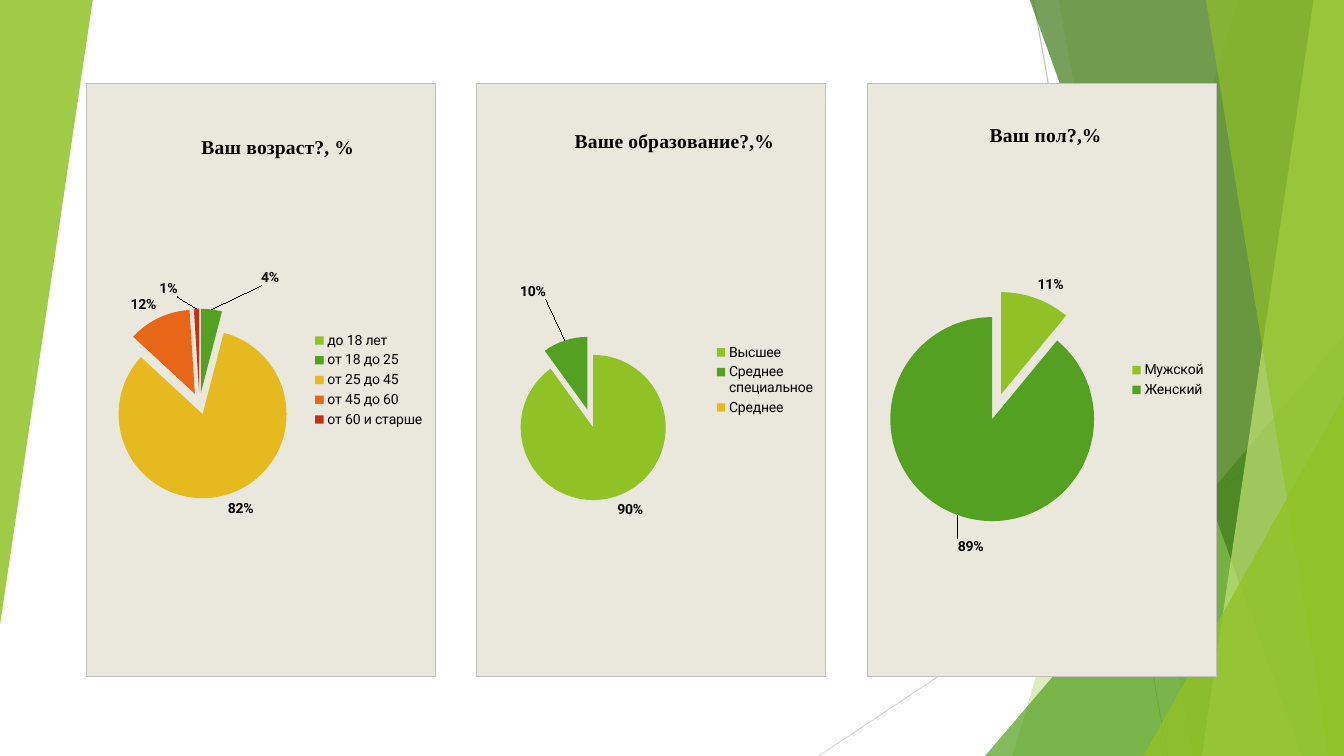
"""Build a slide with three survey pie charts over a green faceted backdrop."""
from copy import deepcopy

from pptx import Presentation
from pptx.chart import data as chart_data
from pptx.dml.color import RGBColor
from pptx.enum import chart as chart_enum, shapes
from pptx.oxml import parse_xml
from pptx.oxml.ns import nsdecls, qn
from pptx.util import Pt

PX = 9144
WIDTH, HEIGHT = 1333, 750
COLORS = {
    "lime": "90C226", "green": "54A021", "yellow": "E6B91E", "orange": "E76618",
    "red": "C42F1A", "forest": "3F7819", "pale": "C0E474", "panel": "EAE8DC",
    "border": "BFBFBF", "rule": "D9D9D9", "text": "000000",
}
SLICE_COLORS = ["lime", "green", "yellow", "orange", "red"]
RULES = [((1025, 0), (1158, 750), "border"), ((1333, 403), (812, 750), "rule")]
FACETS = [
    ("band", 1228, 1004, "lime", 30),
    ("band", 1050, 1183, "lime", 20),
    ("triangle", (977, 333, 356, 417), 0, "green", 72),
    ("band", 1021, 1291, "forest", 70),
    ("band", 1303, 1192, "pale", 70),
    ("band", 1196, 1318, "lime", 65),
    ("triangle", (1134, 393, 199, 357), 0, "lime", 80),
    ("triangle", (0, 0, 92, 620), 180, "lime", 85),
]
CHARTS = [
    {"title": "Ваш возраст?, %", "title_at": (0.32, 0.08),
     "slices": [("до 18 лет", 0), ("от 18 до 25", 4), ("от 25 до 45", 82),
                ("от 45 до 60", 12), ("от 60 и старше", 1)],
     "plot": (0.05, 0.38, 0.55, 0.32),
     "label_shifts": {1: (0.14, -0.03), 4: (-0.08, -0.01)}},
    {"title": "Ваше образование?,% ", "title_at": (0.27, 0.07),
     "slices": [("Высшее", 90), ("Среднее специальное", 10), ("Среднее ", 0)],
     "plot": (0.09, 0.18, 0.47, 0.77),
     "label_shifts": {1: (-0.05, -0.06)}},
    {"title": "Ваш пол?,% ", "title_at": (0.34, 0.06),
     "slices": [("Мужской", 11), ("Женский", 89)],
     "plot": (0.04, 0.35, 0.66, 0.39),
     "label_shifts": {1: (0.08, 0.03)}},
]
CHART_LEFT, CHART_TOP, CHART_WIDTH, CHART_HEIGHT = 85, 82, 347, 590
CHART_STEP = 387.5
EXPLOSION = 13


def color(name):
    return RGBColor.from_string(COLORS[name])


def chart_xml(tag, content="", attributes=""):
    return parse_xml(f'<c:{tag} {nsdecls("c", "a")} {attributes}>{content}</c:{tag}>')


def set_layout(parent, index, box, modes=""):
    for old in parent.findall(qn("c:layout")):
        parent.remove(old)
    values = "".join(f'<c:{key} val="{value}"/>' for key, value in zip("xywh", box))
    parent.insert(index, chart_xml("layout", f"<c:manualLayout>{modes}{values}</c:manualLayout>"))


def add_rule(slide, start, end, name):
    line = slide.shapes.add_connector(
        shapes.MSO_CONNECTOR.STRAIGHT, *(value * PX for value in start + end))
    line.line.color.rgb = color(name)
    line.line.width = Pt(0.75)
    line._element.spPr.append(parse_xml(f'<a:effectLst {nsdecls("a")}/>'))


def add_facet(slide, kind, place, detail, name, opacity):
    if kind == "band":
        builder = slide.shapes.build_freeform(place, -1, scale=PX)
        builder.add_line_segments([(WIDTH, -1), (WIDTH, HEIGHT), (detail, HEIGHT)], close=True)
        shape = builder.convert_to_shape()
    else:
        shape = slide.shapes.add_shape(
            shapes.MSO_SHAPE.ISOSCELES_TRIANGLE, *(value * PX for value in place))
        shape.adjustments[0] = 1
        shape.rotation = detail
    shape.shadow.inherit = False
    shape.line.fill.background()
    shape.fill.solid()
    shape.fill.fore_color.rgb = color(name)
    fill = shape._element.spPr.find(".//" + qn("a:srgbClr"))
    fill.append(parse_xml(f'<a:alpha {nsdecls("a")} val="{opacity * 1000}"/>'))


def style_labels(series, values, shifts):
    labels = series.data_labels
    labels.font.bold = True
    labels.font.size = Pt(10)
    labels.font.name = "Roboto"
    labels.font.color.rgb = color("text")
    sums_to_hundred = sum(values) == 100
    labels.number_format = "0%" if sums_to_hundred else '0"%"'
    labels.number_format_is_linked = False
    labels.show_percentage = sums_to_hundred
    labels.show_value = not sums_to_hundred
    labels.position = chart_enum.XL_LABEL_POSITION.OUTSIDE_END
    element = labels._element
    shared = [child for child in element if child.tag != qn("c:showLeaderLines")]
    special = []
    for index, value in enumerate(values):
        identity = f'<c:idx val="{index}"/>'
        if value == 0:
            special.append(chart_xml("dLbl", identity + '<c:delete val="1"/>'))
        elif index in shifts:
            label = chart_xml("dLbl", identity)
            label.extend(deepcopy(child) for child in shared)
            set_layout(label, 1, shifts[index])
            special.append(label)
    for position, label in enumerate(special):
        element.insert(position, label)


def add_pie(slide, left, content):
    names, values = zip(*content["slices"])
    data = chart_data.CategoryChartData()
    data.categories = names
    data.add_series("Series 1", values)
    box = (left, CHART_TOP, CHART_WIDTH, CHART_HEIGHT)
    chart = slide.shapes.add_chart(
        chart_enum.XL_CHART_TYPE.PIE, *(round(value * PX) for value in box), data).chart
    chart.font.size = Pt(10)
    chart.font.name = "Roboto"
    chart.font.color.rgb = color("text")
    chart.has_legend = True
    chart.legend.position = chart_enum.XL_LEGEND_POSITION.RIGHT
    chart.legend.include_in_layout = False

    chart.has_title = True
    title = chart.chart_title
    title.text_frame.text = content["title"]
    font = title.text_frame.paragraphs[0].runs[0].font
    font.size, font.bold, font.name = Pt(14), True, "Times New Roman"
    font.color.rgb = color("text")
    edges = '<c:xMode val="edge"/><c:yMode val="edge"/>'
    set_layout(title._element, 1, content["title_at"], edges)

    plot = chart.plots[0]
    plot.vary_by_categories = True
    series = plot.series[0]
    series._element.find(qn("c:tx")).addnext(chart_xml("explosion", attributes=f'val="{EXPLOSION}"'))
    for index, name in enumerate(SLICE_COLORS[:len(values)]):
        point = series.points[index].format
        point.fill.solid()
        point.fill.fore_color.rgb = color(name)
        point.line.fill.background()
    style_labels(series, values, content["label_shifts"])

    body = chart._chartSpace.find(qn("c:chart"))
    inner = '<c:layoutTarget val="inner"/>' + edges
    set_layout(body.find(qn("c:plotArea")), 0, content["plot"], inner)
    body.addprevious(chart_xml("roundedCorners", attributes='val="0"'))
    fill, border = (f'<a:solidFill><a:srgbClr val="{COLORS[name]}"/></a:solidFill>'
                    for name in ("panel", "border"))
    body.addnext(chart_xml("spPr", f'{fill}<a:ln w="{Pt(0.75)}">{border}</a:ln>'))


def main():
    presentation = Presentation()
    presentation.slide_width = WIDTH * PX
    presentation.slide_height = HEIGHT * PX
    slide = presentation.slides.add_slide(presentation.slide_layouts[6])
    for rule in RULES:
        add_rule(slide, *rule)
    for facet in FACETS:
        add_facet(slide, *facet)
    for index, content in enumerate(CHARTS):
        add_pie(slide, CHART_LEFT + index * CHART_STEP, content)
    presentation.save("out.pptx")


if __name__ == "__main__":
    main()
